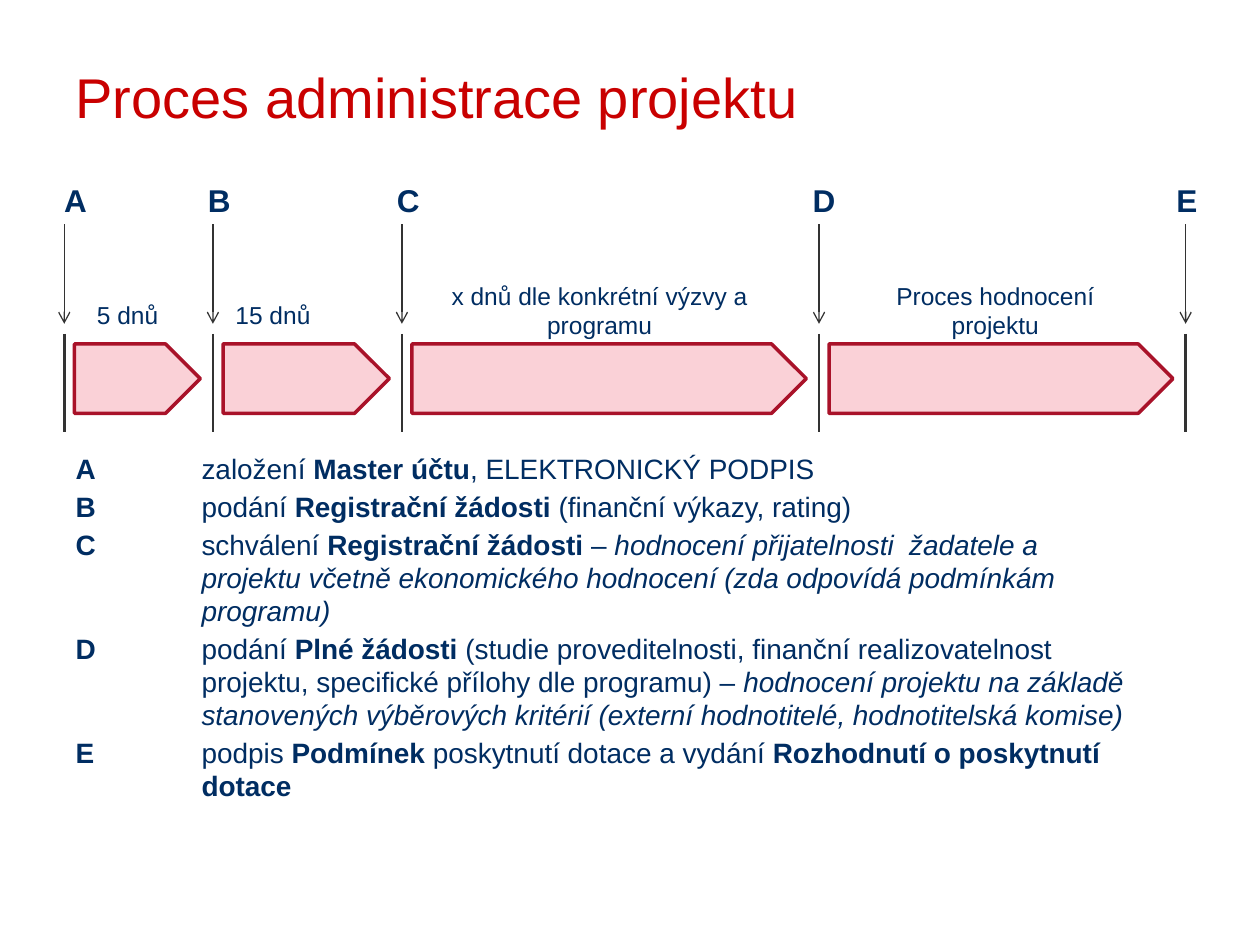
from dataclasses import dataclass

from lxml import etree
from pptx import Presentation
from pptx.dml.color import RGBColor
from pptx.enum.shapes import MSO_CONNECTOR, MSO_SHAPE
from pptx.enum.text import MSO_ANCHOR, PP_ALIGN
from pptx.oxml.ns import qn
from pptx.util import Inches, Pt

PENTAGON = MSO_SHAPE.PENTAGON
STRAIGHT = MSO_CONNECTOR.STRAIGHT
MIDDLE, TOP = MSO_ANCHOR.MIDDLE, MSO_ANCHOR.TOP
LEFT, CENTER = PP_ALIGN.LEFT, PP_ALIGN.CENTER

FONT = "Arial"
RED, NAVY, GRAY = "C90000", "002D62", "333333"
PINK, CRIMSON = "FAD1D7", "A91229"

# Rows of the timeline, in inches
LETTER_TOP, LETTER_HEIGHT = 1.39, 0.4
POINTER_TOP, POINTER_BOTTOM = 1.78, 2.57
TICK_TOP, TICK_BOTTOM = 2.65, 3.43
STAGE_TOP, STAGE_HEIGHT = 2.73, 0.55
GAP_BEFORE, GAP_AFTER = 0.08, 0.1
HANGING = 1.0


@dataclass
class Milestone:
    letter: str
    x: float
    letter_center: float


@dataclass
class Stage:
    label: str
    left: float
    top: float
    width: float
    height: float
    align: PP_ALIGN


@dataclass
class Step:
    letter: str
    runs: list[tuple[str, str]]  # text and style: "b" bold, "i" italic


MILESTONES = [
    Milestone("A", 0.51, 0.6),
    Milestone("B", 1.69, 1.74),
    Milestone("C", 3.19, 3.24),
    Milestone("D", 6.5, 6.54),
    Milestone("E", 9.41, 9.42),
]
STAGES = [
    Stage("5 dnů", 0.67, 2.33, 0.78, 0.34, LEFT),
    Stage("15 dnů", 1.77, 2.33, 1.25, 0.34, LEFT),
    Stage("x dnů dle konkrétní výzvy a programu", 3.43, 2.18, 2.66, 0.57, CENTER),
    Stage("Proces hodnocení projektu", 6.65, 2.18, 2.5, 0.57, CENTER),
]
STEPS = [
    Step("A", [("založení ", ""), ("Master účtu", "b"), (", ELEKTRONICKÝ PODPIS", "")]),
    Step("B", [("podání ", ""), ("Registrační žádosti ", "b"),
               ("(finanční výkazy, rating)", "")]),
    Step("C", [("schválení ", ""), ("Registrační žádosti ", "b"), ("– ", ""),
               ("hodnocení přijatelnosti  žadatele a\n"
                "projektu včetně ekonomického hodnocení (zda odpovídá podmínkám\n"
                "programu)", "i")]),
    Step("D", [("podání ", ""), ("Plné žádosti ", "b"),
               ("(studie proveditelnosti, finanční realizovatelnost\n"
                "projektu, specifické přílohy dle programu) – ", ""),
               ("hodnocení projektu na základě\n"
                "stanovených výběrových kritérií (externí hodnotitelé, "
                "hodnotitelská komise)", "i")]),
    Step("E", [("podpis", ""), (" Podmínek ", "b"), ("poskytnutí dotace a vydání ", ""),
               ("Rozhodnutí o poskytnutí\ndotace", "b")]),
]


def color(value: str) -> RGBColor:
    return RGBColor.from_string(value)


def set_font(paragraph, size: float, value: str) -> None:
    paragraph.font.name = FONT
    paragraph.font.size = Pt(size)
    paragraph.font.color.rgb = color(value)


def add_text(slide, text: str, left: float, top: float, width: float, height: float,
             size: float, value: str = NAVY, align=LEFT, anchor=TOP):
    box = slide.shapes.add_textbox(Inches(left), Inches(top), Inches(width), Inches(height))
    frame = box.text_frame
    frame.word_wrap = True
    frame.vertical_anchor = anchor
    paragraph = frame.paragraphs[0]
    paragraph.text = text
    paragraph.alignment = align
    set_font(paragraph, size, value)
    return paragraph


def add_vertical(slide, x: float, top: float, bottom: float, weight: float,
                 arrow: bool = False) -> None:
    line = slide.shapes.add_connector(STRAIGHT, Inches(x), Inches(top), Inches(x), Inches(bottom))
    line.line.color.rgb = color(GRAY)
    line.line.width = Pt(weight)
    if arrow:
        etree.SubElement(line.line._get_or_add_ln(), qn("a:tailEnd"), type="arrow")
    etree.SubElement(line._element.spPr, qn("a:effectLst"))


def add_milestone(slide, milestone: Milestone) -> None:
    width = 0.6
    letter = add_text(slide, milestone.letter, milestone.letter_center - width / 2,
                      LETTER_TOP, width, LETTER_HEIGHT, 18, align=CENTER)
    letter.font.bold = True
    add_vertical(slide, milestone.x, POINTER_TOP, POINTER_BOTTOM, 0.75, arrow=True)
    add_vertical(slide, milestone.x, TICK_TOP, TICK_BOTTOM, 1.5)


def add_stage(slide, stage: Stage, start: float, end: float) -> None:
    left = start + GAP_BEFORE
    shape = slide.shapes.add_shape(PENTAGON, Inches(left), Inches(STAGE_TOP),
                                   Inches(end - GAP_AFTER - left), Inches(STAGE_HEIGHT))
    shape.shadow.inherit = False
    shape.fill.solid()
    shape.fill.fore_color.rgb = color(PINK)
    shape.line.color.rgb = color(CRIMSON)
    shape.line.width = Pt(2)
    add_text(slide, stage.label, stage.left, stage.top, stage.width, stage.height,
             14, align=stage.align)


def add_run(paragraph, text: str, style: str) -> None:
    for index, part in enumerate(text.split("\n")):
        if index:
            paragraph.add_line_break()
        run = paragraph.add_run()
        run.text = part
        run.font.bold = style == "b"
        run.font.italic = style == "i"


def add_steps(slide, steps: list[Step]) -> None:
    box = slide.shapes.add_textbox(Inches(0.6), Inches(3.59), Inches(8.8), Inches(3.08))
    frame = box.text_frame
    frame.word_wrap = True
    frame.margin_left = frame.margin_right = frame.margin_top = frame.margin_bottom = 0
    for index, step in enumerate(steps):
        paragraph = frame.add_paragraph() if index else frame.paragraphs[0]
        paragraph.line_spacing = Pt(18.8)
        if index:
            paragraph.space_before = Pt(3)
        # Hanging indent with a tab stop where the description starts
        properties = paragraph._p.get_or_add_pPr()
        properties.set("marL", str(Inches(HANGING)))
        properties.set("indent", str(-Inches(HANGING)))
        tabs = etree.SubElement(properties, qn("a:tabLst"))
        etree.SubElement(tabs, qn("a:tab"), pos=str(Inches(HANGING)), algn="l")
        set_font(paragraph, 16, NAVY)
        add_run(paragraph, step.letter + "\t", "b")
        for text, style in step.runs:
            add_run(paragraph, text, style)


def main() -> None:
    presentation = Presentation()
    presentation.slide_width, presentation.slide_height = Inches(10), Inches(7.5)
    slide = presentation.slides.add_slide(presentation.slide_layouts[6])

    # Title
    add_text(slide, "Proces administrace projektu", 0.5, 0.3, 9, 0.93, 32, RED, anchor=MIDDLE)

    # Timeline: a stage between each pair of milestones
    for stage, start, end in zip(STAGES, MILESTONES, MILESTONES[1:]):
        add_stage(slide, stage, start.x, end.x)
    for milestone in MILESTONES:
        add_milestone(slide, milestone)

    # Explanation of the milestones
    add_steps(slide, STEPS)
    presentation.save("out.pptx")


if __name__ == "__main__":
    main()
